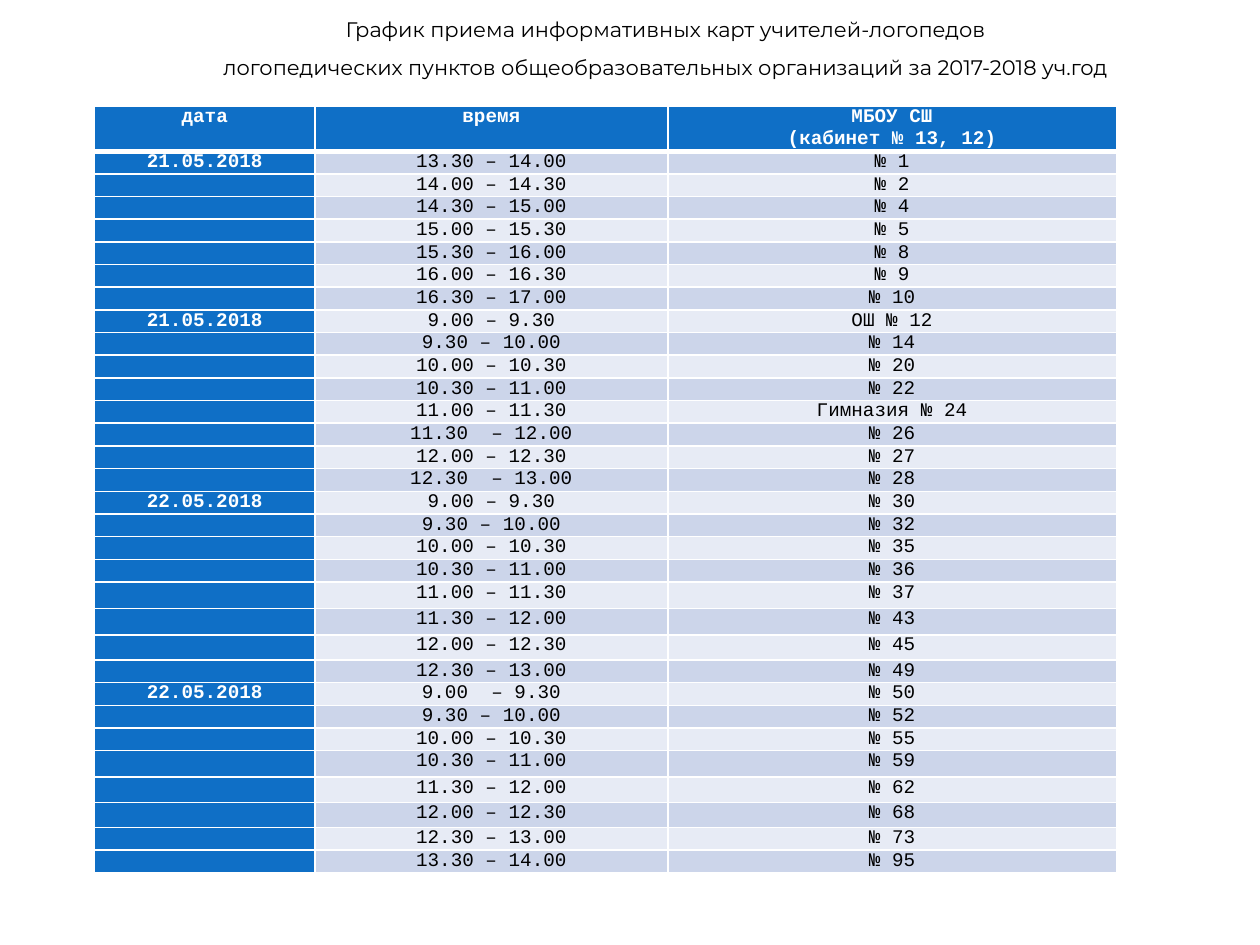
from lxml import etree
from pptx import Presentation
from pptx.dml.color import RGBColor
from pptx.enum.text import MSO_ANCHOR, PP_ALIGN
from pptx.oxml.ns import qn
from pptx.util import Inches, Pt

CENTER = PP_ALIGN.CENTER
TOP = MSO_ANCHOR.TOP

WHITE = "FFFFFF"
BLACK = "000000"
BLUE = "0F6FC6"
BANDS = ["CCD5EA", "E7EBF5"]

TITLE_LINES = [
    "График приема информативных карт учителей-логопедов",
    "логопедических пунктов общеобразовательных организаций за 2017-2018 уч.год",
]
HEADER = ["дата", "время", "МБОУ СШ\n(кабинет № 13, 12)"]
SCHEDULE = [
    ("21.05.2018", [
        ("13.30 – 14.00", "№ 1"),
        ("14.00 – 14.30", "№ 2"),
        ("14.30 – 15.00", "№ 4"),
        ("15.00 – 15.30", "№ 5"),
        ("15.30 – 16.00", "№ 8"),
        ("16.00 – 16.30", "№ 9"),
        ("16.30 – 17.00", "№ 10"),
    ]),
    ("21.05.2018", [
        ("9.00 – 9.30", "ОШ № 12"),
        ("9.30 – 10.00", "№ 14"),
        ("10.00 – 10.30", "№ 20"),
        ("10.30 – 11.00", "№ 22"),
        ("11.00 – 11.30", "Гимназия № 24"),
        ("11.30  – 12.00", "№ 26"),
        ("12.00 – 12.30", "№ 27"),
        ("12.30  – 13.00", "№ 28"),
    ]),
    ("22.05.2018", [
        ("9.00 – 9.30", "№ 30"),
        ("9.30 – 10.00", "№ 32"),
        ("10.00 – 10.30", "№ 35"),
        ("10.30 – 11.00", "№ 36"),
        ("11.00 – 11.30", "№ 37"),
        ("11.30 – 12.00", "№ 43"),
        ("12.00 – 12.30", "№ 45"),
        ("12.30 – 13.00", "№ 49"),
    ]),
    ("22.05.2018", [
        ("9.00  – 9.30", "№ 50"),
        ("9.30 – 10.00", "№ 52"),
        ("10.00 – 10.30", "№ 55"),
        ("10.30 – 11.00", "№ 59"),
        ("11.30 – 12.00", "№ 62"),
        ("12.00 – 12.30", "№ 68"),
        ("12.30 – 13.00", "№ 73"),
        ("13.30 – 14.00", "№ 95"),
    ]),
]
COLUMN_WIDTHS = [1.75, 2.8, 3.56]
HEADER_HEIGHT = 0.36
ROW_HEIGHT = 0.18
TALL_ROWS = {20: 0.21, 21: 0.21, 22: 0.2, 27: 0.21, 28: 0.2, 29: 0.2}


def color(value):
    return RGBColor.from_string(value)


def style_paragraph(paragraph, font_name, size, font_color, bold=False):
    paragraph.alignment = CENTER
    font = paragraph.font
    font.name = font_name
    font.size = Pt(size)
    font.bold = bold
    font.color.rgb = color(font_color)


def add_title(slide):
    box = slide.shapes.add_textbox(Inches(0.2), Inches(-0.02), Inches(10.17), Inches(0.97))
    frame = box.text_frame
    frame.word_wrap = True
    frame.vertical_anchor = TOP
    frame.text = "\n".join(TITLE_LINES)
    for paragraph in frame.paragraphs:
        style_paragraph(paragraph, "Montserrat", 12, BLACK)
        paragraph.line_spacing = 1.5


def set_borders(cell, top, bottom):
    properties = cell._tc.get_or_add_tcPr()
    for side, width in (("L", 1), ("R", 1), ("T", top), ("B", bottom)):
        line = etree.SubElement(properties, qn(f"a:ln{side}"), w=str(Pt(width)))
        fill = etree.SubElement(line, qn("a:solidFill"))
        etree.SubElement(fill, qn("a:srgbClr"), val=WHITE)


def fill_cell(cell, text, fill_color, font_color, bold, top, bottom):
    cell.margin_left = cell.margin_right = Inches(0.06)
    cell.margin_top = cell.margin_bottom = 0
    cell.vertical_anchor = TOP
    set_borders(cell, top, bottom)
    cell.fill.solid()
    cell.fill.fore_color.rgb = color(fill_color)
    cell.text = text
    for paragraph in cell.text_frame.paragraphs:
        style_paragraph(paragraph, "Courier New", 11, font_color, bold)
        if not text:
            paragraph._p.get_or_add_endParaRPr().set("sz", "1100")


def table_rows():
    rows = [HEADER]
    for date, visits in SCHEDULE:
        for index, (time, school) in enumerate(visits):
            rows.append(["" if index else date, time, school])
    return rows


def add_schedule(slide):
    rows = table_rows()
    heights = [HEADER_HEIGHT] + [TALL_ROWS.get(i, ROW_HEIGHT) for i in range(1, len(rows))]
    frame = slide.shapes.add_table(
        len(rows), len(HEADER), Inches(0.75), Inches(0.84),
        Inches(sum(COLUMN_WIDTHS)), Inches(sum(heights)),
    )
    table = frame.table
    table.first_row = False
    table.horz_banding = False
    for column, width in zip(table.columns, COLUMN_WIDTHS):
        column.width = Inches(width)
    for row_index, (texts, height) in enumerate(zip(rows, heights)):
        table.rows[row_index].height = Inches(height)
        top = 3 if row_index == 1 else 1
        bottom = 3 if row_index == 0 else 1
        for column_index, text in enumerate(texts):
            heading = row_index == 0 or column_index == 0
            fill_color = BLUE if heading else BANDS[(row_index - 1) % 2]
            font_color = WHITE if heading else BLACK
            cell = table.cell(row_index, column_index)
            fill_cell(cell, text, fill_color, font_color, heading, top, bottom)


def main():
    presentation = Presentation()
    presentation.slide_width = Inches(10)
    presentation.slide_height = Inches(7.5)
    slide = presentation.slides.add_slide(presentation.slide_layouts[6])
    add_schedule(slide)
    add_title(slide)
    presentation.save("out.pptx")


if __name__ == "__main__":
    main()
